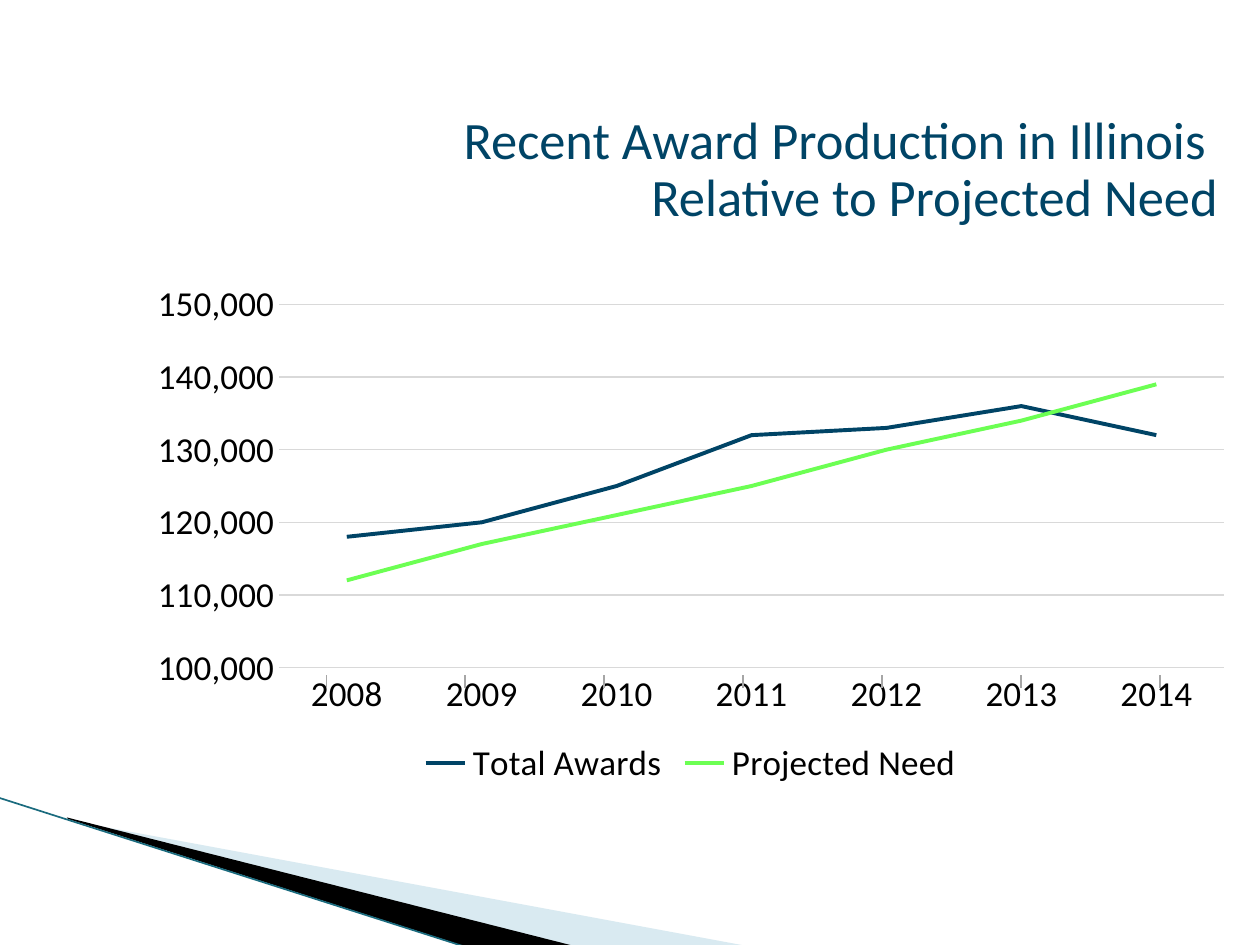
from dataclasses import dataclass

from lxml import etree
from pptx import Presentation
from pptx import util as u
from pptx.chart.data import CategoryChartData
from pptx.dml.color import RGBColor
from pptx.enum import chart as charts, shapes, text
from pptx.oxml import parse_xml
from pptx.oxml.ns import nsdecls, qn

FONT = "Calibri"
NAVY, GREEN, BLACK = "004466", "6CFF53", "000000"
PALE_BLUE, TEAL = "A0CBDC", "1A6B7E"
GRID_GREY, TICK_GREY = "D9D9D9", "A6A6A6"


@dataclass
class Wedge:
    points: list[tuple[float, float]]
    color: str
    opacity: int = 100


@dataclass
class Series:
    name: str
    values: list[int]
    color: str


WEDGES = [
    Wedge([(1.4, 16.54), (15.11, 19.08), (11.58, 19.08), (1.4, 16.51)], PALE_BLUE, 40),
    Wedge([(1.35, 16.48), (11.61, 19.08), (9.45, 19.1), (1.37, 16.51)], BLACK),
]
YEARS = [str(year) for year in range(2008, 2015)]
SERIES = [
    Series("Total Awards",
           [118000, 120000, 125000, 132000, 133000, 136000, 132000], NAVY),
    Series("Projected Need",
           [112000, 117000, 121000, 125000, 130000, 134000, 139000], GREEN),
]
TICK_LEFT, TICK_STEP, TICK_TOP, TICK_BOTTOM = 6.58, 2.8, 13.61, 13.87


def rgb(color: str) -> RGBColor:
    return RGBColor.from_string(color)


def set_line(line, color: str, width: float) -> None:
    line.color.rgb = rgb(color)
    line.width = u.Pt(width)


def set_font(font, size: float, color: str) -> None:
    font.name = FONT
    font.size = u.Pt(size)
    font.color.rgb = rgb(color)


def draw_wedge(slide, wedge: Wedge) -> None:
    points = [(u.Cm(x), u.Cm(y)) for x, y in wedge.points]
    builder = slide.shapes.build_freeform(*points[0])
    builder.add_line_segments(points[1:], close=True)
    shape = builder.convert_to_shape()
    shape.shadow.inherit = False
    shape.fill.solid()
    shape.fill.fore_color.rgb = rgb(wedge.color)
    shape.line.fill.background()
    if wedge.opacity < 100:
        color = shape.fill._xPr.find(".//" + qn("a:srgbClr"))
        etree.SubElement(color, qn("a:alpha"), val=str(wedge.opacity * 1000))


def draw_line(container, start: tuple[float, float], end: tuple[float, float],
              color: str, width: float) -> None:
    connector = container.add_connector(
        shapes.MSO_CONNECTOR.STRAIGHT, *map(u.Cm, start + end))
    set_line(connector.line, color, width)
    etree.SubElement(connector._element.spPr, qn("a:effectLst"))


def add_text(slide, lines: list[str], left: float, top: float, width: float,
             height: float, *, size: float, color: str, align, spacing: float) -> None:
    box = slide.shapes.add_textbox(*map(u.Cm, (left, top, width, height)))
    frame = box.text_frame
    frame.word_wrap = True
    frame.vertical_anchor = text.MSO_ANCHOR.MIDDLE
    frame.margin_left = frame.margin_right = u.Cm(0.18)
    frame.margin_top = frame.margin_bottom = u.Cm(0.1)
    for index, line in enumerate(lines):
        paragraph = frame.add_paragraph() if index else frame.paragraphs[0]
        paragraph.alignment = align
        paragraph.line_spacing = spacing
        run = paragraph.add_run()
        run.text = line
        set_font(run.font, size, color)


def set_plot_layout(chart, x: float, y: float, w: float, h: float) -> None:
    """Fix the inner plot area, in fractions of the chart."""
    plot_area = chart._chartSpace.chart.plotArea
    for old in plot_area.findall(qn("c:layout")):
        plot_area.remove(old)
    sizes = "".join(f'<c:{key} val="{value}"/>'
                    for key, value in zip("xywh", (x, y, w, h)))
    plot_area.insert(0, parse_xml(
        f'<c:layout {nsdecls("c")}><c:manualLayout><c:layoutTarget val="inner"/>'
        f'<c:xMode val="edge"/><c:yMode val="edge"/>{sizes}'
        '</c:manualLayout></c:layout>'))


def add_award_chart(slide) -> None:
    data = CategoryChartData(number_format="#,##0")
    data.categories = YEARS
    for series in SERIES:
        data.add_series(series.name, series.values)
    chart = slide.shapes.add_chart(
        charts.XL_CHART_TYPE.LINE,
        *map(u.Cm, (2.72, 5.51, 22.4, 10.46)), data).chart
    chart.has_title = False
    set_font(chart.font, 20, BLACK)
    set_plot_layout(chart, 0.13, 0.06, 0.85, 0.7)

    chart.has_legend = True
    chart.legend.position = charts.XL_LEGEND_POSITION.BOTTOM
    chart.legend.include_in_layout = False
    set_font(chart.legend.font, 20, BLACK)

    for axis in (chart.category_axis, chart.value_axis):
        axis.major_tick_mark = axis.minor_tick_mark = charts.XL_TICK_MARK.NONE
        set_font(axis.tick_labels.font, 20, BLACK)
    set_line(chart.category_axis.format.line, GRID_GREY, 0.75)

    value_axis = chart.value_axis
    value_axis.minimum_scale = 100000
    value_axis.maximum_scale = 150000
    value_axis.major_unit = 10000
    value_axis.format.line.fill.background()
    value_axis.tick_labels.number_format = "#,##0"
    value_axis.tick_labels.number_format_is_linked = False
    set_line(value_axis.major_gridlines.format.line, GRID_GREY, 0.75)

    plot = chart.plots[0]
    plot.vary_by_categories = False
    for drawn, series in zip(plot.series, SERIES):
        drawn.smooth = False
        drawn.marker.style = charts.XL_MARKER_STYLE.NONE
        set_line(drawn.format.line, series.color, 2.25)


def main() -> None:
    presentation = Presentation()
    presentation.slide_width = u.Cm(25.4)
    presentation.slide_height = u.Cm(19.05)
    slide = presentation.slides.add_slide(presentation.slide_layouts[6])

    for wedge in WEDGES:
        draw_wedge(slide, wedge)
    draw_line(slide.shapes, (-0.03, 16.08), (9.42, 19.1), TEAL, 0.95)
    add_text(slide,
             ["Recent Award Production in Illinois ", "Relative to Projected Need"],
             2.72, 2.11, 22.02, 2.69, size=30, color=NAVY,
             align=text.PP_ALIGN.RIGHT, spacing=0.9)
    add_award_chart(slide)

    ticks = slide.shapes.add_group_shape().shapes
    for index in range(len(YEARS)):
        x = TICK_LEFT + index * TICK_STEP
        draw_line(ticks, (x, TICK_TOP), (x, TICK_BOTTOM), TICK_GREY, 1)

    presentation.save("out.pptx")


if __name__ == "__main__":
    main()
